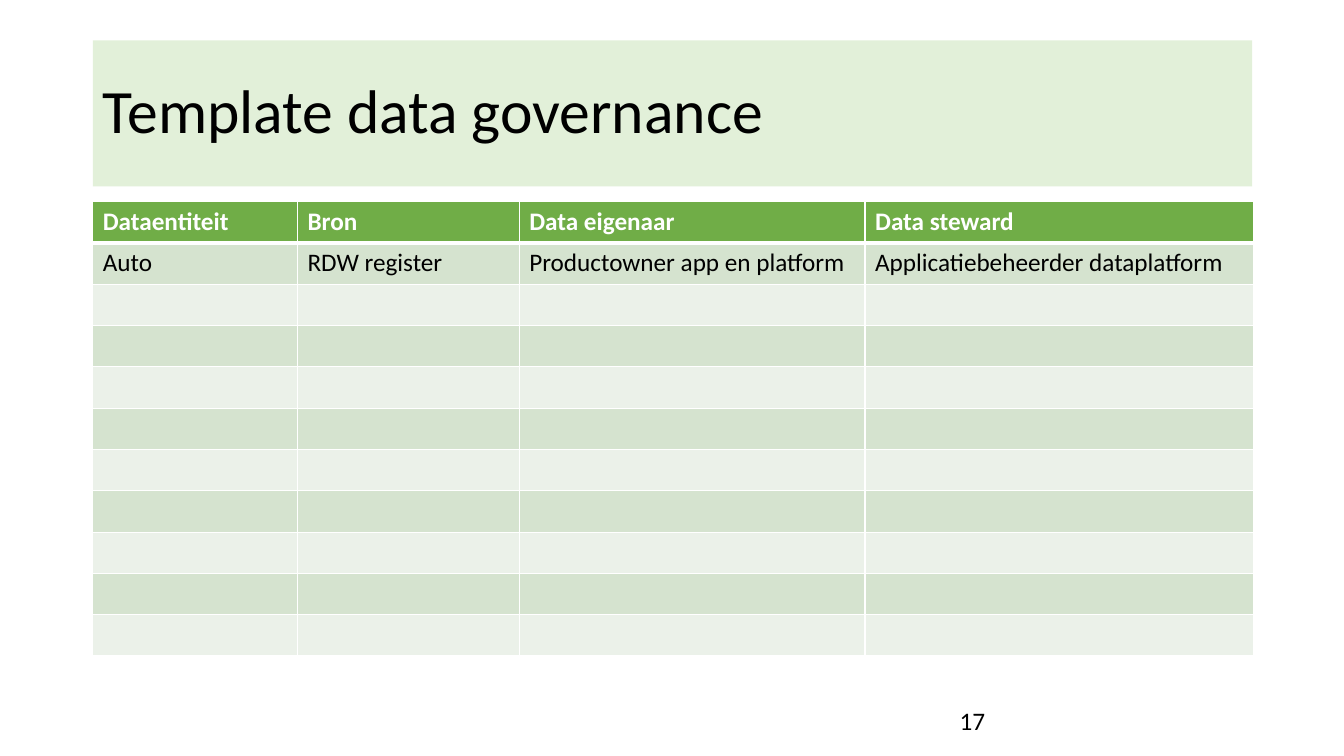
"""Build the data governance template slide."""
from pptx import Presentation
from pptx.dml.color import RGBColor
from pptx.enum.text import MSO_ANCHOR, PP_ALIGN
from pptx.oxml import parse_xml
from pptx.oxml.ns import nsdecls
from pptx.util import Inches, Pt

MIDDLE, LEFT = MSO_ANCHOR.MIDDLE, PP_ALIGN.LEFT
COLOURS = {"black": "000000", "white": "FFFFFF", "title": "E2F0D9",
           "head": "70AD47", "odd": "D5E3CF", "even": "EBF1E9"}
TITLE = "Template data governance"
NUMBER = "17"
ROWS = [
    ("Dataentiteit", "Bron", "Data eigenaar", "Data steward"),
    ("Auto", "RDW register", "Productowner app en platform",
     "Applicatiebeheerder dataplatform"),
] + [("",) * 4] * 9
WIDTHS = (2.03, 2.2, 3.43, 3.85)
ROW_HEIGHT = 0.41
BOXES = {"title": (0.92, 0.4, 11.5, 1.45),
         "table": (0.92, 2, sum(WIDTHS), ROW_HEIGHT * len(ROWS)),
         "number": (9.42, 6.95, 3, 0.4)}
FORMATS = {"title": {"size": Pt(44), "bold": False},
           "head": {"size": Pt(18), "bold": True},
           "body": {"size": Pt(18), "bold": False}}


def place(name):
    return [Inches(v) for v in BOXES[name]]


def colour(name):
    return RGBColor.from_string(COLOURS[name])


def paint(fill, name):
    fill.solid()
    fill.fore_color.rgb = colour(name)


def write(frame, text, style, ink="black"):
    para = frame.paragraphs[0]
    para.text = text
    para.alignment = LEFT
    for font in [para.font] + [run.font for run in para.runs]:
        font.name = "Calibri"
        font.color.rgb = colour(ink)
        for key, value in FORMATS[style].items():
            setattr(font, key, value)
    return para


def edge(cell, side, points):
    cell.get_or_add_tcPr() if hasattr(cell, "get_or_add_tcPr") else None
    cell._tc.get_or_add_tcPr().append(parse_xml(
        f'<a:{side} {nsdecls("a")} w="{Pt(points)}"><a:solidFill>'
        f'<a:srgbClr val="{COLOURS["white"]}"/></a:solidFill></a:{side}>'))


def add_title(slide):
    title = slide.shapes.title
    title.left, title.top, title.width, title.height = place("title")
    paint(title.fill, "title")
    title.text_frame.vertical_anchor = MIDDLE
    write(title.text_frame, TITLE, "title").line_spacing = 0.9


def add_grid(slide):
    table = slide.shapes.add_table(len(ROWS), len(WIDTHS),
                                   *place("table")).table
    for col, width in zip(table.columns, WIDTHS):
        col.width = Inches(width)
    for r, texts in enumerate(ROWS):
        table.rows[r].height = Inches(ROW_HEIGHT)
        band = "head" if r == 0 else "odd" if r % 2 else "even"
        style, ink = ("body", "black") if r else ("head", "white")
        for c, text in enumerate(texts):
            cell = table.cell(r, c)
            for side, points in (("lnL", 1), ("lnR", 1),
                                 ("lnT", 3 if r == 1 else 1),
                                 ("lnB", 3 if r == 0 else 1)):
                edge(cell, side, points)
            paint(cell.fill, band)
            write(cell.text_frame, text, style, ink)


def add_number(slide):
    frame = slide.shapes.add_textbox(*place("number")).text_frame
    frame.word_wrap = True
    write(frame, NUMBER, "body")


def main():
    deck = Presentation()
    deck.slide_width, deck.slide_height = Inches(13.33), Inches(7.5)
    slide = deck.slides.add_slide(deck.slide_layouts[5])
    add_title(slide)
    add_grid(slide)
    add_number(slide)
    deck.save("out.pptx")


if __name__ == "__main__":
    main()
